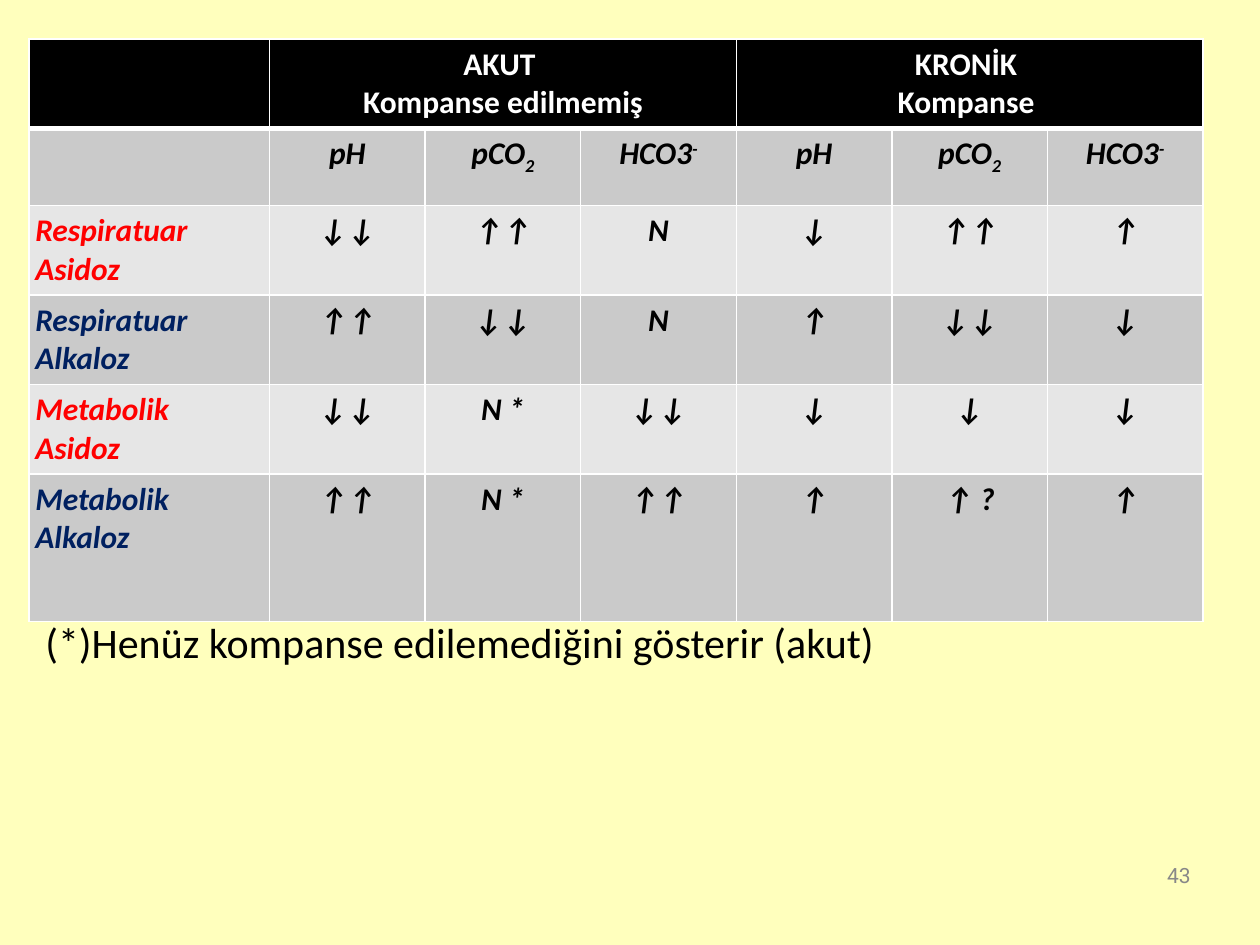
from dataclasses import dataclass

from lxml.etree import SubElement
from pptx import Presentation
from pptx.dml.color import RGBColor
from pptx.enum.text import MSO_ANCHOR, PP_ALIGN
from pptx.oxml.ns import qn
from pptx.util import Inches, Pt


@dataclass(frozen=True)
class Theme:
    background: str = "FFFFBD"
    header: str = "000000"
    dark_band: str = "CACACA"
    light_band: str = "E6E6E6"
    white: str = "FFFFFF"
    black: str = "000000"
    acidosis: str = "FF0000"
    alkalosis: str = "002060"
    gray: str = "888888"
    font: str = "Calibri"
    number_font: str = "Roboto"
    table_size: int = 18
    note_size: int = 24
    number_size: int = 12


THEME = Theme()
PHASES = [["AKUT ", "Kompanse edilmemiş"], ["KRONİK ", "Kompanse "]]
MEASURES = [
    [("pH", 0)],
    [("pCO", 0), ("2", -25)],
    [("HCO3", 0), ("-", 30)],
]
DISORDERS = [
    (["Respiratuar Asidoz"], THEME.acidosis, ["↓↓", "↑↑", "N", "↓", "↑↑", "↑"]),
    (["Respiratuar Alkaloz"], THEME.alkalosis, ["↑↑", "↓↓", "N", "↑", "↓↓", "↓"]),
    (["Metabolik", "Asidoz"], THEME.acidosis, ["↓↓", "N *", "↓↓", "↓", "↓", "↓"]),
    (["Metabolik", "Alkaloz"], THEME.alkalosis, ["↑↑", "N *", "↑↑", "↑", "↑ ?", "↑"]),
]
NOTE = "(*)Henüz kompanse edilemediğini gösterir (akut)"
PAGE_NUMBER = "43"
COLUMN_WIDTHS = [1.91] + [1.235] * 6
ROW_HEIGHTS = [0.61] * 5 + [1.17]
INSET = Inches(0.05)


def plain(lines):
    return [[(line, 0)] for line in lines]


def write(frame, paragraphs, size, color, align, font=THEME.font, bold=False, italic=False):
    for index, runs in enumerate(paragraphs):
        paragraph = frame.paragraphs[0] if index == 0 else frame.add_paragraph()
        paragraph.alignment = align
        for text, baseline in runs:
            run = paragraph.add_run()
            run.text = text
            run.font.name = font
            run.font.size = Pt(size)
            run.font.bold = bold
            run.font.italic = italic
            run.font.color.rgb = RGBColor.from_string(color)
            if baseline:
                run.font._element.set("baseline", str(baseline * 1000))


def set_borders(cell, row):
    properties = cell._tc.get_or_add_tcPr()
    widths = {"L": 1, "R": 1, "T": 3 if row == 1 else 1, "B": 3 if row == 0 else 1}
    for index, (side, width) in enumerate(widths.items()):
        line = SubElement(properties, qn(f"a:ln{side}"), w=str(Pt(width)))
        fill = SubElement(line, qn("a:solidFill"))
        SubElement(fill, qn("a:srgbClr"), val=THEME.white)
        properties.insert(index, line)


def add_disorder_table(slide):
    row_count, column_count = len(ROW_HEIGHTS), len(COLUMN_WIDTHS)
    table = slide.shapes.add_table(
        row_count, column_count, Inches(0.23), Inches(0.31),
        Inches(sum(COLUMN_WIDTHS)), Inches(sum(ROW_HEIGHTS)),
    ).table
    for column, width in zip(table.columns, COLUMN_WIDTHS):
        column.width = Inches(width)
    for row, height in zip(table.rows, ROW_HEIGHTS):
        row.height = Inches(height)

    for row in range(row_count):
        band = THEME.dark_band if row % 2 else THEME.light_band
        for column in range(column_count):
            cell = table.cell(row, column)
            cell.margin_left = cell.margin_right = INSET
            cell.margin_top = cell.margin_bottom = INSET
            cell.fill.solid()
            cell.fill.fore_color.rgb = RGBColor.from_string(band if row else THEME.header)
            set_borders(cell, row)

    def fill_cell(row, column, paragraphs, color=THEME.black, align=PP_ALIGN.CENTER):
        write(table.cell(row, column).text_frame, paragraphs, THEME.table_size,
              color, align, bold=True, italic=row > 0)

    span = len(MEASURES)
    for index, lines in enumerate(PHASES):
        first = 1 + index * span
        table.cell(0, first).merge(table.cell(0, first + span - 1))
        fill_cell(0, first, plain(lines), THEME.white)
        for offset, runs in enumerate(MEASURES):
            fill_cell(1, first + offset, [runs])
    for row, (name, color, changes) in enumerate(DISORDERS, start=2):
        fill_cell(row, 0, plain(name), color, PP_ALIGN.LEFT)
        for column, change in enumerate(changes, start=1):
            fill_cell(row, column, plain([change]))


def add_text_box(slide, left, top, width, height, anchor):
    frame = slide.shapes.add_textbox(
        Inches(left), Inches(top), Inches(width), Inches(height)).text_frame
    frame.word_wrap = True
    frame.vertical_anchor = anchor
    frame.margin_left = frame.margin_right = INSET
    frame.margin_top = frame.margin_bottom = INSET
    return frame


def main():
    presentation = Presentation()
    presentation.slide_width = Inches(10)
    presentation.slide_height = Inches(7.5)
    slide = presentation.slides.add_slide(presentation.slide_layouts[6])
    slide.background.fill.solid()
    slide.background.fill.fore_color.rgb = RGBColor.from_string(THEME.background)

    add_disorder_table(slide)

    note = add_text_box(slide, 0.31, 4.84, 9.22, 1.88, MSO_ANCHOR.TOP)
    write(note, plain([NOTE]), THEME.note_size, THEME.black, PP_ALIGN.LEFT)
    paragraph = note.paragraphs[0]
    paragraph.space_before = Pt(5)
    properties = paragraph._p.get_or_add_pPr()
    properties.set("marL", str(Inches(0.38)))
    properties.set("indent", str(Inches(-0.38)))

    number = add_text_box(slide, 7.17, 6.8, 2.33, 0.29, MSO_ANCHOR.MIDDLE)
    write(number, plain([PAGE_NUMBER]), THEME.number_size, THEME.gray,
          PP_ALIGN.RIGHT, THEME.number_font)

    presentation.save("out.pptx")


if __name__ == "__main__":
    main()
